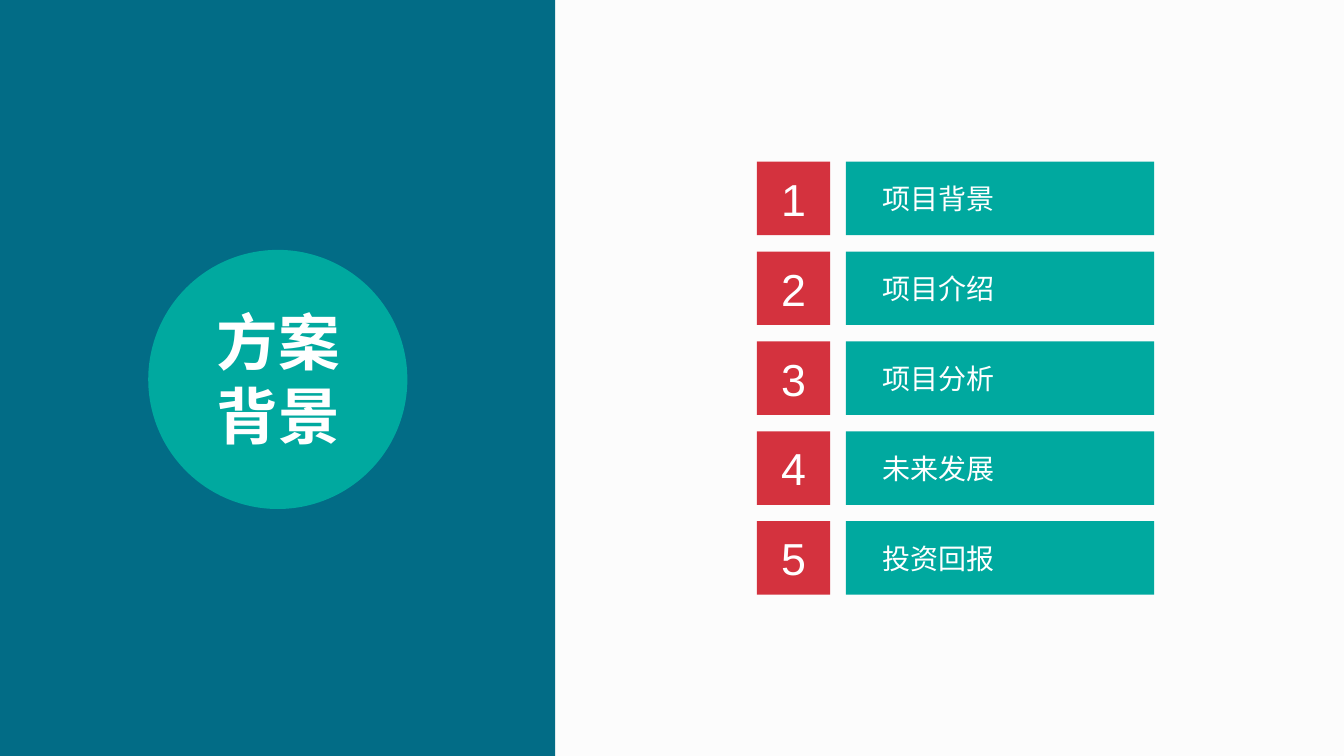
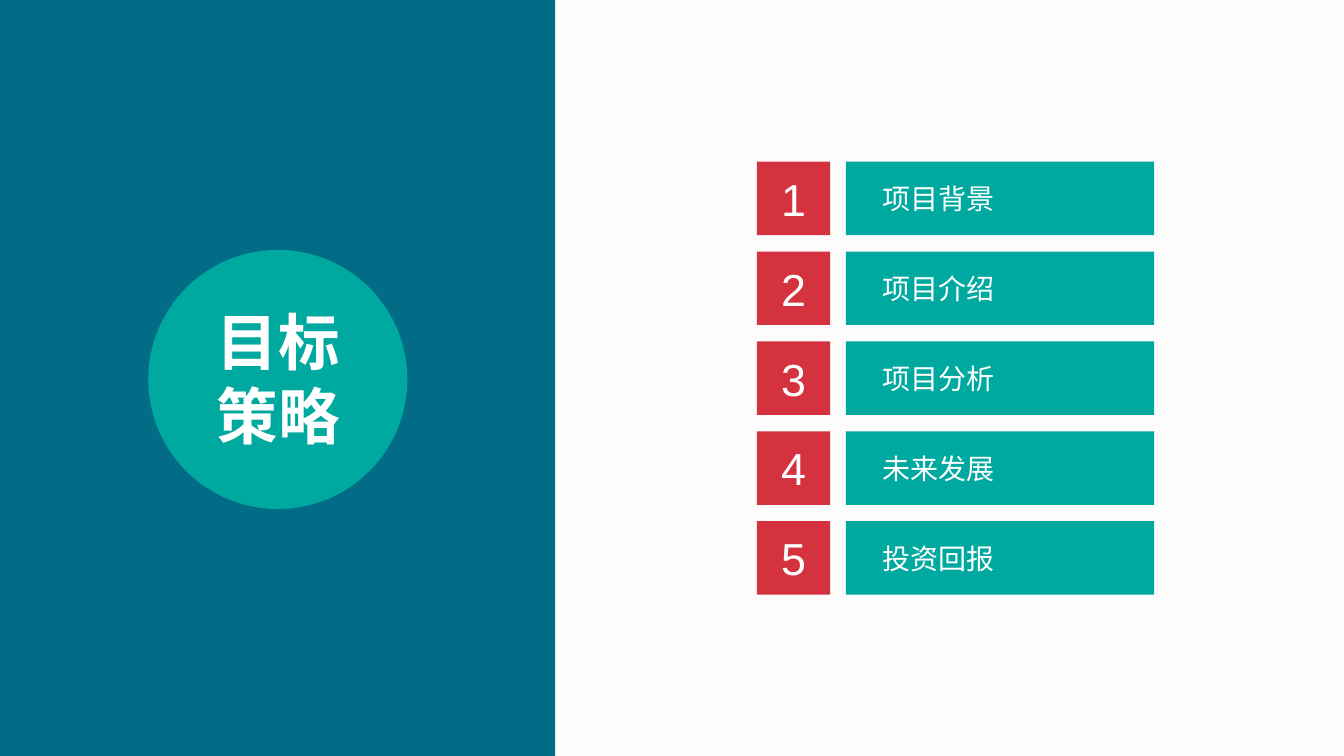
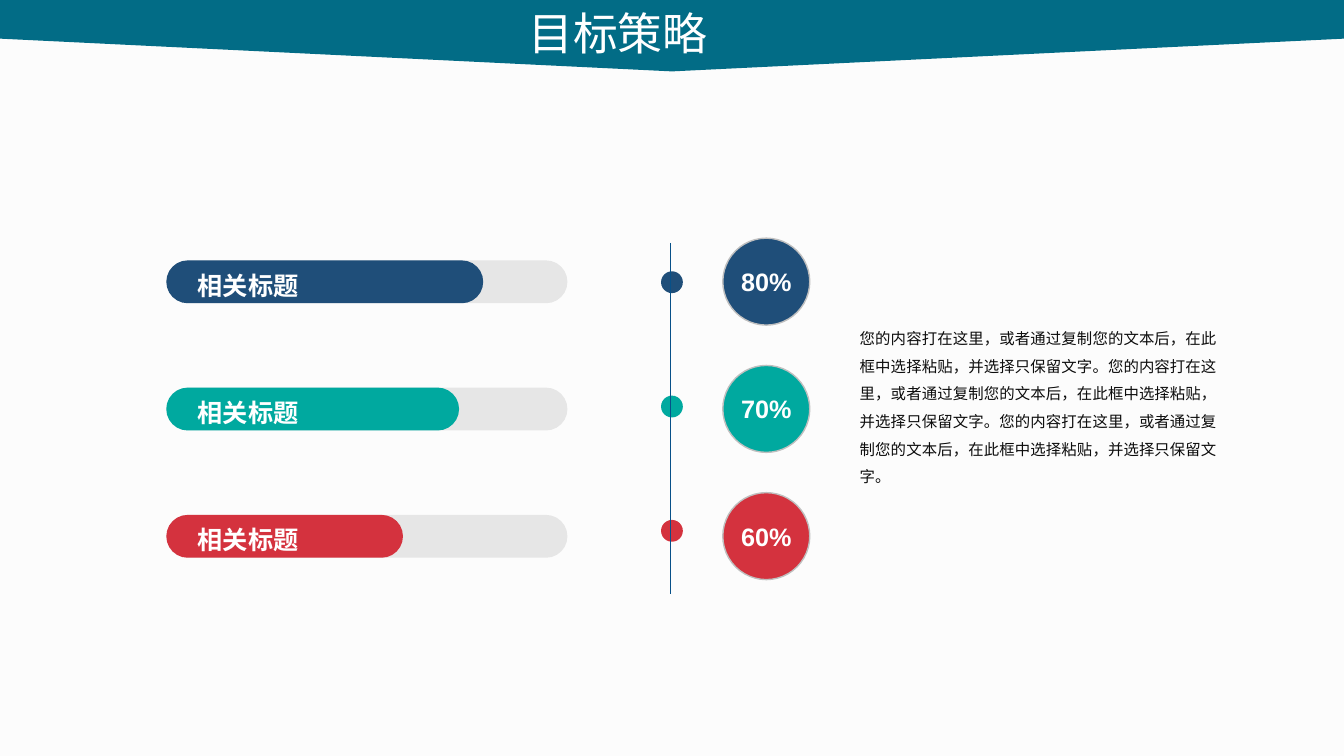
import pptx
import pptx.util
import pptx.dml.color
import pptx.enum.shapes
import pptx.enum.text
import pptx.oxml
import pptx.oxml.ns

RGB = pptx.dml.color.RGBColor
SHAPE = pptx.enum.shapes.MSO_SHAPE
ALIGN = pptx.enum.text.PP_ALIGN
ANCHOR = pptx.enum.text.MSO_ANCHOR
qn = pptx.oxml.ns.qn

# Shared style
PAPER = RGB(0xFC, 0xFC, 0xFC)
WHITE = RGB(0xFF, 0xFF, 0xFF)
INK = RGB(0x0D, 0x0D, 0x0D)
PETROL = RGB(0x02, 0x6C, 0x86)
TEAL = RGB(0x00, 0xA9, 0x9F)
RED = RGB(0xD4, 0x32, 0x3E)
NAVY = RGB(0x1F, 0x4E, 0x79)
AXIS_BLUE = RGB(0x07, 0x50, 0x88)
TRACK_GREY = RGB(0xE6, 0xE6, 0xE6)
RING_GREY = RGB(0xBF, 0xBF, 0xBF)
CJK = "Noto Sans CJK SC"
LATIN = "Arial"

# Grid of square cells over the whole slide
COLUMNS, ROWS = 32, 18
CELL = pptx.util.Inches(7.5) / ROWS

TITLE_ONLY, TITLE_AND_BODY = 5, 1
AGENDA = ["项目背景", "项目介绍", "项目分析", "未来发展", "投资回报"]
# Label, percentage, share of the track that is filled, colour
GOALS = [
    ("相关标题", "80%", 0.79, NAVY),
    ("相关标题", "70%", 0.73, TEAL),
    ("相关标题", "60%", 0.59, RED),
]
SENTENCE = "您的内容打在这里，或者通过复制您的文本后，在此框中选择粘贴，并选择只保留文字。"


def cells(*counts):
    return [pptx.util.Emu(round(count * CELL)) for count in counts]


def write(shape, text, size, color=WHITE, font=CJK, bold=False,
          align=ALIGN.CENTER, wrap=True, inset=0):
    """Fill a shape with text; inset is the left margin in cells."""
    frame = shape.text_frame
    frame.text = text
    frame.word_wrap = wrap
    frame.auto_size = pptx.enum.text.MSO_AUTO_SIZE.NONE
    frame.vertical_anchor = ANCHOR.MIDDLE
    frame.margin_left = cells(inset)[0]
    frame.margin_right = frame.margin_top = frame.margin_bottom = 0
    for paragraph in frame.paragraphs:
        paragraph.alignment = align
        paragraph.font.size = pptx.util.Pt(size)
        paragraph.font.bold = bold
        paragraph.font.color.rgb = color
        paragraph.font.name = font
    # East Asian characters take their own typeface entry
    for properties in shape.element.iter(qn("a:defRPr")):
        east_asian = properties.makeelement(qn("a:ea"), {"typeface": font})
        properties.append(east_asian)
    return frame


def block(slide, kind, left, top, width, height, fill, outline=None):
    shape = slide.shapes.add_shape(kind, *cells(left, top, width, height))
    shape.shadow.inherit = False
    shape.fill.solid()
    shape.fill.fore_color.rgb = fill
    if outline is None:
        shape.line.fill.background()
    else:
        shape.line.color.rgb = outline
        shape.line.width = pptx.util.Pt(1)
    return shape


def place(placeholder, left, top, width, height):
    (placeholder.left, placeholder.top,
     placeholder.width, placeholder.height) = cells(left, top, width, height)


def title_over(slide, backdrop, position, text, size, **style):
    """Lay the title placeholder directly on top of its backdrop."""
    title = slide.shapes.title
    place(title, *position)
    write(title, text, size, **style)
    backdrop.element.addnext(title.element)


def axis(slide, x, top, bottom):
    line = slide.shapes.add_connector(
        pptx.enum.shapes.MSO_CONNECTOR.STRAIGHT, *cells(x, top, x, bottom))
    line.line.color.rgb = AXIS_BLUE
    line.line.width = pptx.util.Pt(0.5)
    properties = line.element.find(qn("p:spPr"))
    properties.append(properties.makeelement(qn("a:effectLst"), {}))


def section_slide(deck, heading):
    slide = deck.slides.add_slide(deck.slide_layouts[TITLE_ONLY])
    block(slide, SHAPE.RECTANGLE, 0, 0, 13.22, ROWS, PETROL)
    disc = block(slide, SHAPE.OVAL, 3.53, 5.95, 6.17, 6.17, TEAL)
    title_over(slide, disc, (4.9, 7.1, 3.45, 3.8), heading, 44,
               bold=True, wrap=False)
    # Numbered agenda
    for index, topic in enumerate(AGENDA):
        top = 3.85 + index * 2.14
        bar = block(slide, SHAPE.RECTANGLE, 20.14, top, 7.34, 1.75, TEAL)
        write(bar, topic, 20, align=ALIGN.JUSTIFY, inset=0.88)
        number = block(slide, SHAPE.RECTANGLE, 18.02, top, 1.75, 1.75, RED)
        write(number, str(index + 1), 32, font=LATIN)


def progress_bar(slide, top, label, share, color):
    left, length, height = 3.96, 9.55, 1.02
    for width, fill in ((length, TRACK_GREY), (length * share, color)):
        bar = block(slide, SHAPE.ROUNDED_RECTANGLE,
                    left, top, width, height, fill)
        bar.adjustments[0] = 0.5
    frame = write(bar, label, 18, bold=True, align=ALIGN.LEFT, inset=0.6)
    frame.margin_top = cells(0.15)[0]


def goals_slide(deck, heading):
    slide = deck.slides.add_slide(deck.slide_layouts[TITLE_AND_BODY])
    # Header band pointing down
    depth, length = 1.7, COLUMNS + 0.1
    band = block(slide, SHAPE.PENTAGON, (COLUMNS - depth) / 2,
                 (depth - length) / 2, depth, length, PETROL)
    band.rotation = 90
    band.adjustments[0] = 0.46
    title_over(slide, band, (12.34, 0, 7.32, 1.54), heading, 32,
               align=ALIGN.JUSTIFY, inset=0.24)

    # One row per goal: bar, dot on the axis, percentage
    for index, (label, percent, share, color) in enumerate(GOALS):
        progress_bar(slide, 6.2 + index * 3.03, label, share, color)
        block(slide, SHAPE.OVAL, 15.74, 6.46 + index * 2.96, 0.52, 0.52, color)
        badge = block(slide, SHAPE.OVAL, 17.21, 5.67 + index * 3.03,
                      2.07, 2.07, color, RING_GREY)
        write(badge, percent, 18, font=LATIN, bold=True, wrap=False)
    axis(slide, 15.96, 5.78, 14.14)

    # Explanation
    body = slide.placeholders[1]
    place(body, 20.23, 7.49, 8.98, 4.25)
    frame = write(body, SENTENCE * 3, 11, color=INK,
                  align=ALIGN.JUSTIFY, inset=0.24)
    frame.margin_right = frame.margin_left
    frame.margin_top = cells(0.12)[0]
    frame.vertical_anchor = ANCHOR.TOP
    paragraph = frame.paragraphs[0]
    paragraph.line_spacing = 1.5
    paragraph.space_before = pptx.util.Pt(10)
    for properties in body.element.iter(qn("a:pPr")):
        properties.set("marL", "0")
        properties.set("indent", "0")
        no_bullet = properties.makeelement(qn("a:buNone"), {})
        properties.find(qn("a:defRPr")).addprevious(no_bullet)


def main():
    deck = pptx.Presentation()
    deck.slide_width, deck.slide_height = cells(COLUMNS, ROWS)
    paper = deck.slide_master.background.fill
    paper.solid()
    paper.fore_color.rgb = PAPER
    section_slide(deck, "方案\n背景")
    section_slide(deck, "目标\n策略")
    goals_slide(deck, "目标策略")
    deck.save("out.pptx")


if __name__ == "__main__":
    main()
